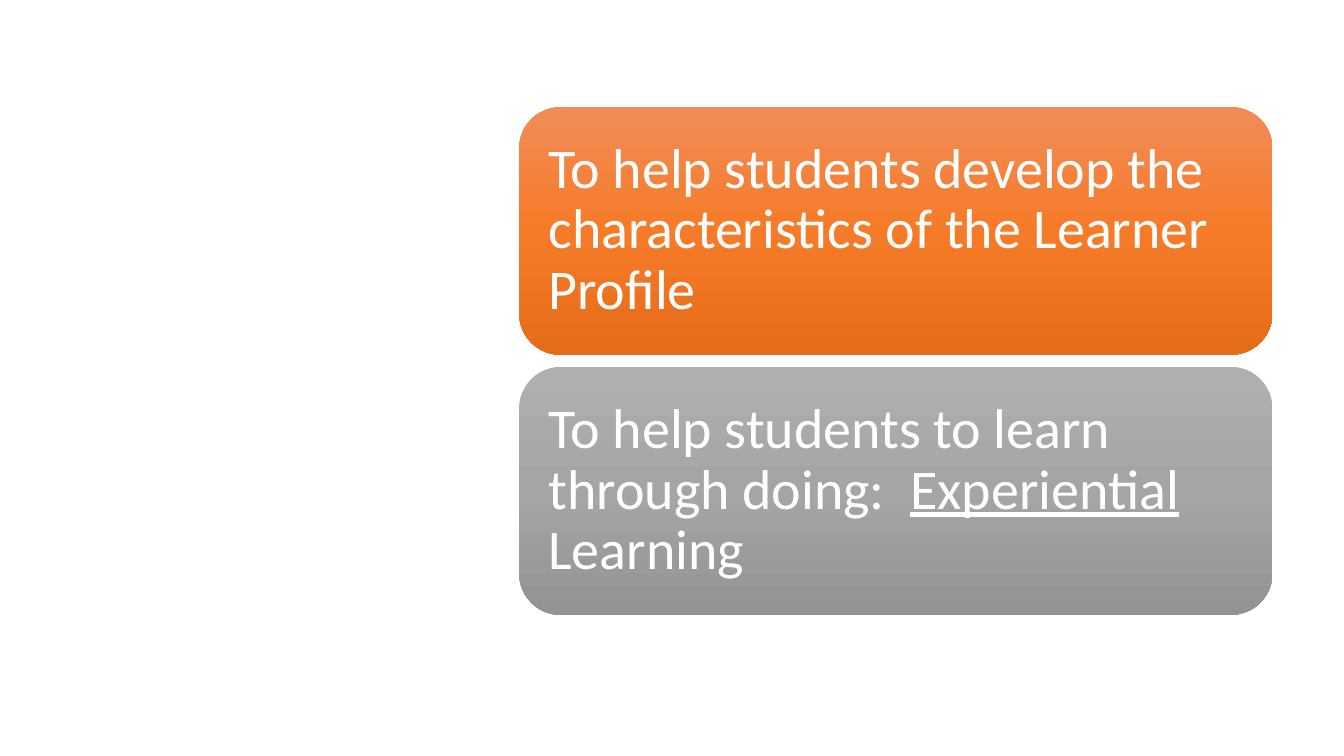
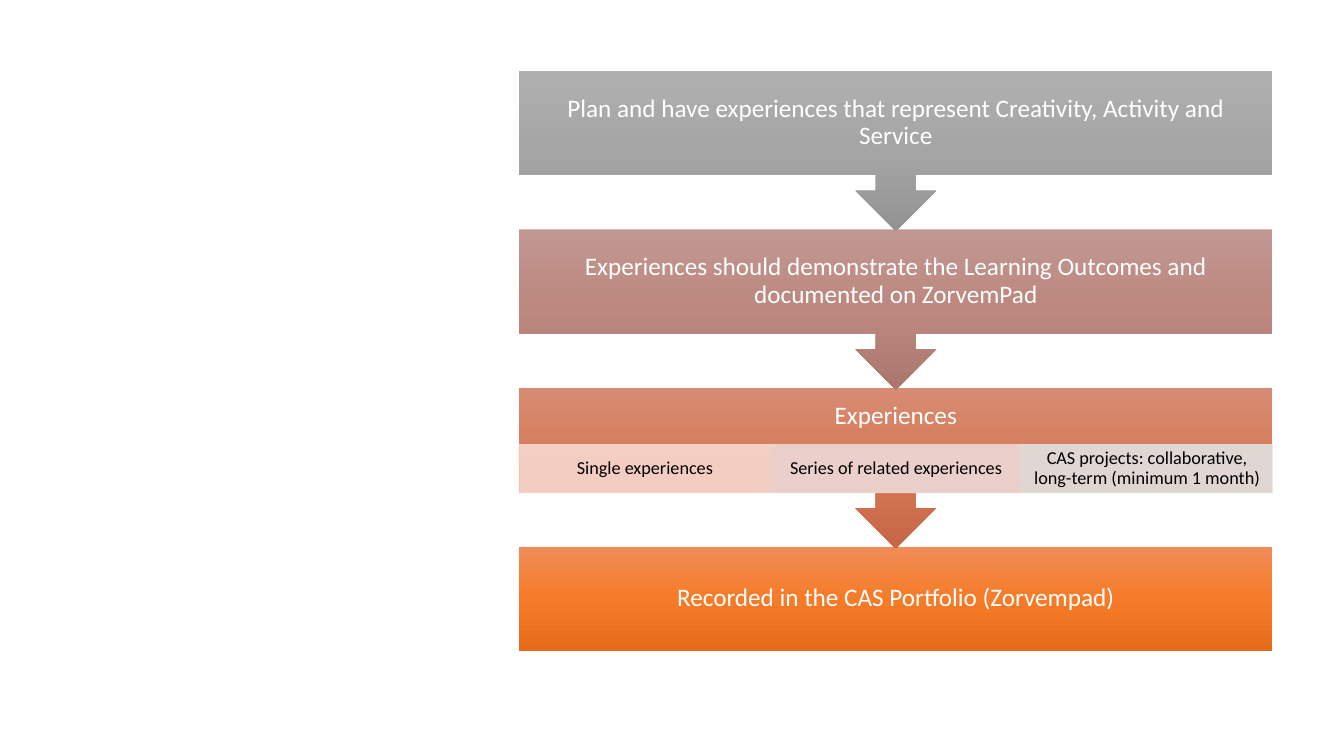
"""Build two slides on the aims and the process of CAS."""
from copy import deepcopy

from lxml import etree
from pptx import Presentation
from pptx import util as u
from pptx.dml.color import RGBColor
from pptx.enum import shapes, text
from pptx.oxml.ns import qn

ORANGE = ("F18C57", "F67B28", "E56C19")
GRAY = ("AFAFAF", "A5A5A5", "939393")
ROSE = ("C19791", "BC8880", "AA766E")
TERRACOTTA = ("D78B72", "D77956", "C66846")
LEFT, WIDTH = 5.15, 7.47


def add_block(slide, preset, left, top, width, height, colours):
    """Add a shape with a three-stop gradient, or one translucent colour."""
    block = slide.shapes.add_shape(preset, *map(u.Inches, (left, top, width, height)))
    block.shadow.inherit = False
    if len(colours) == 3:
        block.line.fill.background()
        block.fill.gradient()
        block.fill.gradient_angle = 270
        stops = block._element.spPr.find(".//" + qn("a:gsLst"))
        stops.insert(1, deepcopy(stops[0]))
        for stop, colour, position in zip(block.fill.gradient_stops, colours, (0, 0.5, 1)):
            stop.color.rgb = RGBColor.from_string(colour)
            stop.position = position
    else:
        block.line.width = u.Pt(0.5)
        for fill in (block.fill, block.line.fill):
            fill.solid()
            fill.fore_color.rgb = RGBColor.from_string(colours[0])
        for colour in block._element.spPr.iter(qn("a:srgbClr")):
            etree.SubElement(colour, qn("a:alpha")).set("val", "90000")
    return block


def write(block, wording, size=18, colour="FFFFFF", align=text.PP_ALIGN.CENTER,
          insets=(0.14, 0.14, 0.14, 0.14), underlined=None):
    """Write one paragraph into a block, with an optional underlined word."""
    frame = block.text_frame
    frame.word_wrap = True
    frame.vertical_anchor = text.MSO_ANCHOR.MIDDLE
    (frame.margin_left, frame.margin_top,
     frame.margin_right, frame.margin_bottom) = map(u.Inches, insets)
    paragraph = frame.paragraphs[0]
    paragraph.alignment = align
    paragraph.line_spacing = 0.9
    for part in wording.partition(underlined) if underlined else (wording,):
        run = paragraph.add_run()
        run.text = part
        run.font.name = "Calibri"
        run.font.size = u.Pt(size)
        run.font.color.rgb = RGBColor.from_string(colour)
        run.font.underline = part == underlined


deck = Presentation()
deck.slide_width, deck.slide_height = u.Inches(13.33), u.Inches(7.5)
blank = deck.slide_layouts[6]

aims_slide = deck.slides.add_slide(blank)
aims = [
    ("To help students develop the characteristics of the Learner Profile", ORANGE, None),
    ("To help students to learn through doing:  Experiential Learning", GRAY, "Experiential"),
]
for row, (wording, colours, underlined) in enumerate(aims):
    aim = add_block(aims_slide, shapes.MSO_SHAPE.ROUNDED_RECTANGLE,
                    LEFT, 1.06 + 2.58 * row, WIDTH, 2.46, colours)
    write(aim, wording, size=40, align=text.PP_ALIGN.LEFT, insets=(0.17,) * 4,
          underlined=underlined)

process_slide = deck.slides.add_slide(blank)
CALLOUT = shapes.MSO_SHAPE.DOWN_ARROW_CALLOUT
steps = [
    ("Plan and have experiences that represent Creativity, Activity and Service",
     GRAY, CALLOUT, 1.59, 0.14),
    ("Experiences should demonstrate the Learning Outcomes and documented on ZorvemPad",
     ROSE, CALLOUT, 1.59, 0.14),
    ("Experiences", TERRACOTTA, CALLOUT, 1.59, 0.61),
    ("Recorded in the CAS Portfolio (Zorvempad)",
     ORANGE, shapes.MSO_SHAPE.RECTANGLE, 1.03, 0.14),
]
for row, (wording, colours, preset, height, bottom) in reversed(list(enumerate(steps))):
    step = add_block(process_slide, preset, LEFT, 0.7 + 1.575 * row, WIDTH, height, colours)
    write(step, wording, insets=(0.14, 0.14, 0.14, bottom))

kinds = [
    ("Single experiences", "F8D7CE"),
    ("Series of related experiences", "EDD9D7"),
    ("CAS projects: collaborative, long-term (minimum 1 month)", "E1E1E1"),
]
kind_width = WIDTH / len(kinds)
for column, (wording, colour) in enumerate(kinds):
    kind = add_block(process_slide, shapes.MSO_SHAPE.RECTANGLE,
                     LEFT + kind_width * column, 4.41, kind_width, 0.48, (colour,))
    write(kind, wording, size=13, colour="000000", insets=(0.1, 0.02, 0.1, 0.02))

deck.save("out.pptx")
